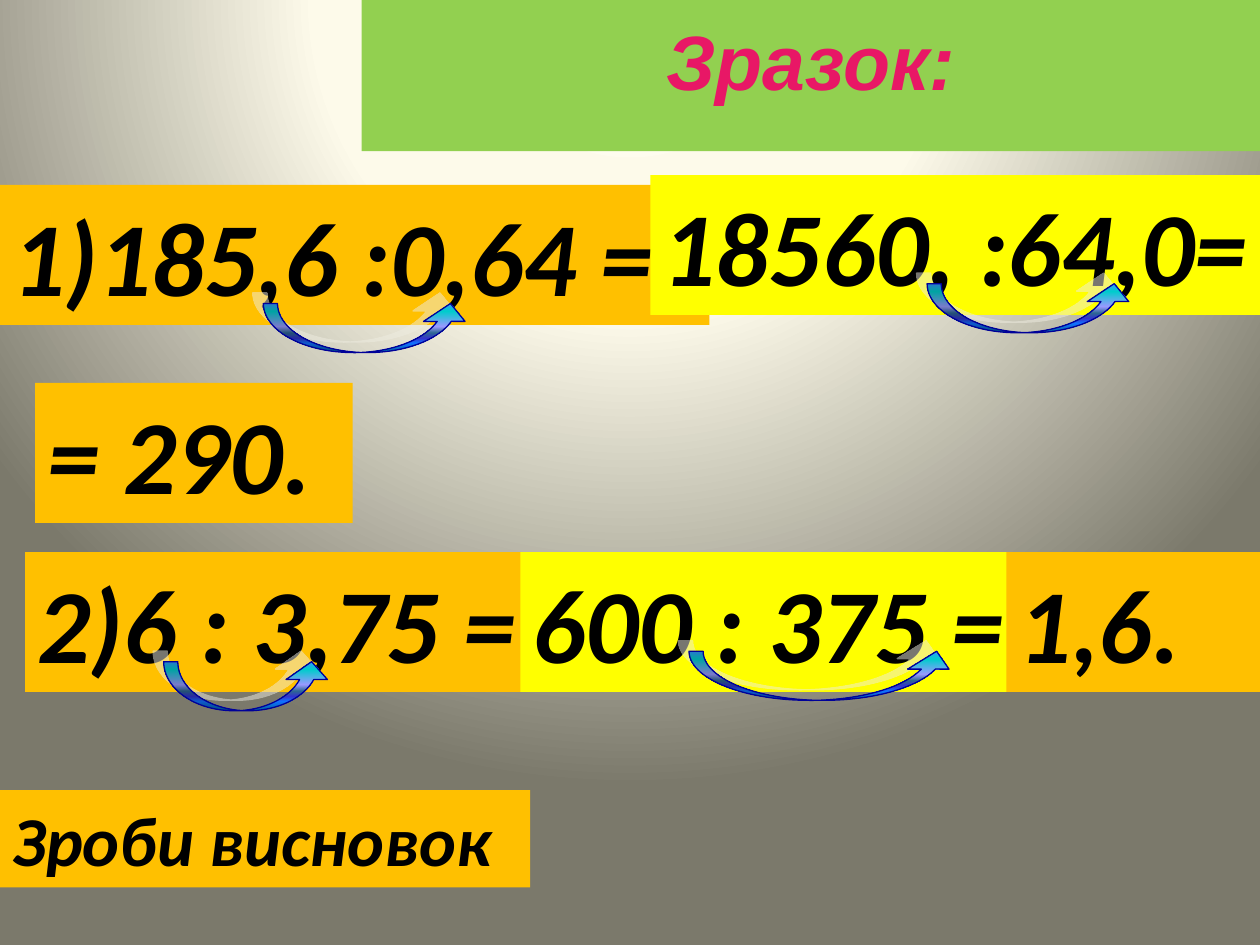
from lxml import etree
from pptx import Presentation
from pptx.dml.color import RGBColor
from pptx.enum.shapes import MSO_SHAPE
from pptx.enum.text import MSO_ANCHOR, MSO_AUTO_SIZE, PP_ALIGN
from pptx.oxml import parse_xml
from pptx.oxml.ns import qn
from pptx.util import Cm, Pt

CURVED_ARROW = MSO_SHAPE.CURVED_DOWN_ARROW
TOP = MSO_ANCHOR.TOP
GROW = MSO_AUTO_SIZE.SHAPE_TO_FIT_TEXT
NO_FIT = MSO_AUTO_SIZE.NONE
LEFT, CENTER = PP_ALIGN.LEFT, PP_ALIGN.CENTER

DRAWING = "http://schemas.openxmlformats.org/drawingml/2006/main"
ORANGE, YELLOW, GREEN = "FFC000", "FFFF00", "92D050"
BLACK, CRIMSON, NAVY = "000000", "E81766", "000099"
BACKGROUND_STOPS = [(0, "FEFCEE"), (40, "FDFAEA"), (100, "7B796B")]
ARROW_STOPS = [
    (0, "006699"), (19, "1170FF"), (29, "3333CC"), (40, "2E6792"),
    (53, "9999FF"), (84, "00CCCC"), (100, "3399FF"),
]
BACKGROUND_SHADE = (
    '<a:path path="circle"><a:fillToRect l="50000" t="-80000" '
    'r="50000" b="180000"/></a:path>'
)
ARROW_SHADE = '<a:lin ang="5400000" scaled="0"/>'
ARROW_SHADOW = (
    f'<a:effectLst xmlns:a="{DRAWING}">'
    f'<a:outerShdw dist="{Pt(8.5)}" dir="13500000" rotWithShape="0">'
    '<a:srgbClr val="EEECE1"><a:alpha val="50000"/></a:srgbClr>'
    "</a:outerShdw></a:effectLst>"
)
EQUATION_HEIGHT = 2.82
SECOND_ROW = 11.13


def color(value):
    return RGBColor.from_string(value)


def set_gradient(fill, properties, stops, shade):
    fill.solid()
    gradient = etree.Element(qn("a:gradFill"), rotWithShape="1")
    stop_list = etree.SubElement(gradient, qn("a:gsLst"))
    for position, value in stops:
        stop = etree.SubElement(stop_list, qn("a:gs"), pos=str(position * 1000))
        etree.SubElement(stop, qn("a:srgbClr"), val=value)
    gradient.append(parse_xml(shade.replace(" ", f' xmlns:a="{DRAWING}" ', 1)))
    properties.replace(properties.find(qn("a:solidFill")), gradient)


def write_text(shape, text, size=60, font="Calibri", font_color=BLACK,
               align=LEFT, auto_size=GROW, margin_top=0.13):
    frame = shape.text_frame
    frame.word_wrap = True
    frame.auto_size = auto_size
    frame.vertical_anchor = TOP
    frame.margin_top = Cm(margin_top)
    paragraph = frame.paragraphs[0]
    paragraph.alignment = align
    run = paragraph.add_run()
    run.text = text
    run.font.name = font
    run.font.size = Pt(size)
    run.font.bold = True
    run.font.italic = True
    run.font.color.rgb = color(font_color)


def add_title(slide, text):
    title = slide.shapes.title
    title.left, title.top = Cm(7.29), Cm(0)
    title.width, title.height = Cm(18.11), Cm(3.05)
    title.fill.solid()
    title.fill.fore_color.rgb = color(GREEN)
    write_text(title, text, size=44, font="Arial", font_color=CRIMSON,
               align=CENTER, auto_size=NO_FIT, margin_top=0.28)


def add_label(slide, text, left, top, width, fill_color,
              height=EQUATION_HEIGHT, size=60):
    box = slide.shapes.add_textbox(Cm(left), Cm(top), Cm(width), Cm(height))
    box.fill.solid()
    box.fill.fore_color.rgb = color(fill_color)
    write_text(box, text, size=size)


def add_comma_arrow(slide, left, top, width):
    arrow = slide.shapes.add_shape(
        CURVED_ARROW, Cm(left), Cm(top), Cm(width), Cm(0.99))
    for index, value in enumerate((0.288, 0.844, 0.364)):
        arrow.adjustments[index] = value
    properties = arrow._element.spPr
    properties.xfrm.set("flipV", "1")
    set_gradient(arrow.fill, properties, ARROW_STOPS, ARROW_SHADE)
    arrow.line.color.rgb = color(NAVY)
    arrow.line.width = Pt(0.75)
    properties.append(parse_xml(ARROW_SHADOW))


def main():
    presentation = Presentation()
    presentation.slide_width, presentation.slide_height = Cm(25.4), Cm(19.05)
    slide = presentation.slides.add_slide(presentation.slide_layouts[5])
    background_fill = slide.background.fill
    background_fill.solid()
    background = slide._element.find(".//" + qn("p:bgPr"))
    set_gradient(background_fill, background, BACKGROUND_STOPS, BACKGROUND_SHADE)

    add_title(slide, "Зразок:")
    for text, left, top, width, fill_color in (
        ("1)185,6 :0,64 =", 0, 3.73, 14.3, ORANGE),
        ("18560, :64,0=", 13.11, 3.53, 12.29, YELLOW),
        ("= 290.", 0.71, 7.72, 6.4, ORANGE),
        ("2)6 : 3,75 =", 0.51, SECOND_ROW, 10.21, ORANGE),
        ("600 : 375 =", 10.49, SECOND_ROW, 10.21, YELLOW),
        ("1,6.", 20.29, SECOND_ROW, 5.11, ORANGE),
    ):
        add_label(slide, text, left, top, width, fill_color)
    add_label(slide, "Зроби висновок", 0, 15.93, 10.69, ORANGE,
              height=1.96, size=40)

    for left, top, width in (
        (5.31, 6.12, 4.19), (18.69, 5.72, 4.19),
        (3.3, 13.34, 3.4), (13.89, 13.13, 5.41),
    ):
        add_comma_arrow(slide, left, top, width)
    presentation.save("out.pptx")


if __name__ == "__main__":
    main()
